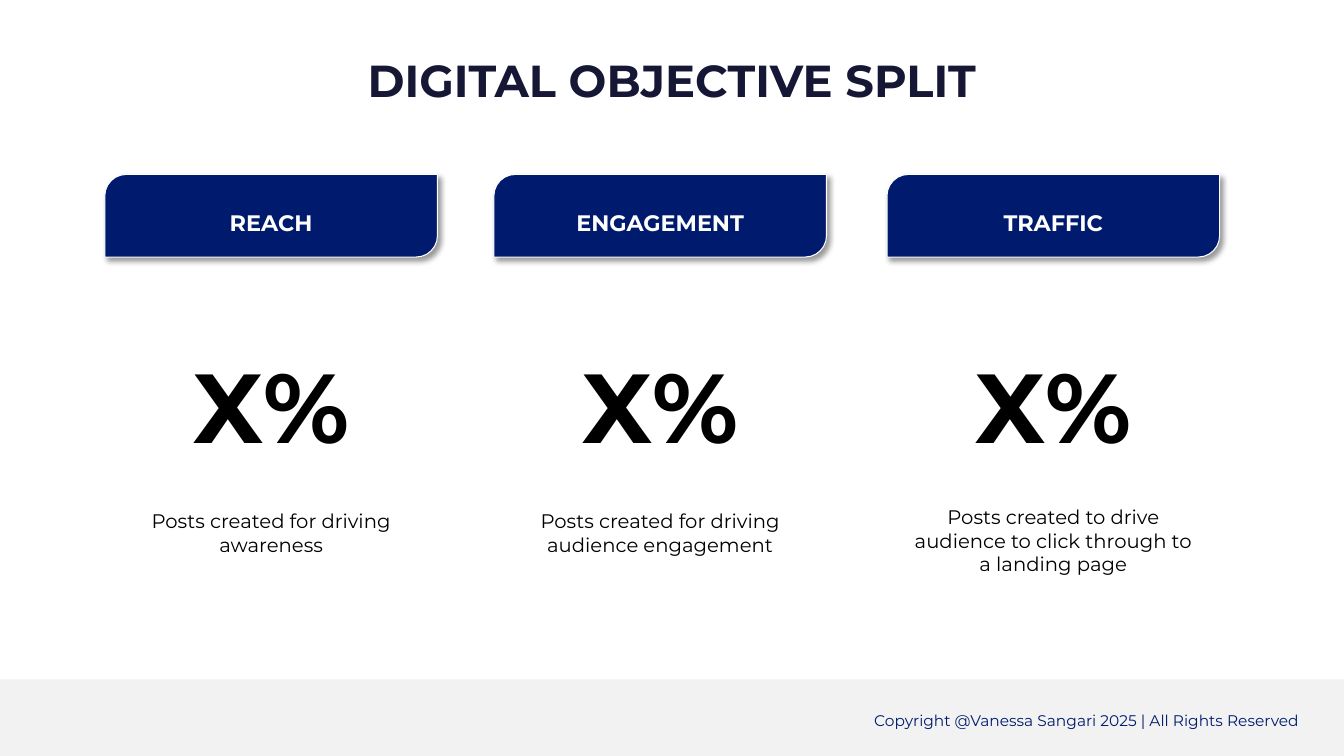
from lxml.etree import SubElement
from pptx import Presentation
from pptx.dml.color import RGBColor
from pptx.enum.shapes import MSO_SHAPE
from pptx.enum.text import MSO_ANCHOR, MSO_AUTO_SIZE, PP_ALIGN
from pptx.oxml.ns import qn
from pptx.util import Pt

COLORS = {
    "navy": "001B6D",
    "title": "161735",
    "text": "000000",
    "band": "F2F2F2",
    "white": "FFFFFF",
}
FONT = "Montserrat"
SLIDE_WIDTH, SLIDE_HEIGHT = 960, 540
COLUMN_TOP, COLUMN_WIDTH = 124.6, 237.6
OBJECTIVES = [
    (74.9, "REACH", "X%", "Posts created for driving awareness", 360),
    (352.8, "ENGAGEMENT", "X%", "Posts created for driving audience engagement", 360),
    (633.6, "TRAFFIC", "X%",
     "Posts created to drive audience to click through to a landing page", 357.1),
]


def color(name):
    return RGBColor.from_string(COLORS[name])


def place(shape, left, top, width, height):
    shape.left, shape.top = Pt(left), Pt(top)
    shape.width, shape.height = Pt(width), Pt(height)


def write(shape, text, size, color_name, bold=False, align=PP_ALIGN.CENTER,
          spacing=1.0, anchor=MSO_ANCHOR.TOP):
    frame = shape.text_frame
    frame.word_wrap = True
    frame.auto_size = MSO_AUTO_SIZE.NONE
    frame.vertical_anchor = anchor
    frame.text = text
    paragraph = frame.paragraphs[0]
    paragraph.alignment = align
    paragraph.line_spacing = spacing
    font = paragraph.font
    font.name, font.size, font.bold = FONT, Pt(size), bold
    font.color.rgb = color(color_name)


def add_text(slide, left, top, width, height, text, size, color_name, **style):
    box = slide.shapes.add_textbox(Pt(left), Pt(top), Pt(width), Pt(height))
    write(box, text, size, color_name, **style)


def add_panel(slide, preset, left, top, width, height, fill):
    panel = slide.shapes.add_shape(preset, Pt(left), Pt(top), Pt(width), Pt(height))
    panel.shadow.inherit = False
    panel.fill.solid()
    panel.fill.fore_color.rgb = color(fill)
    panel.line.fill.background()
    return panel


def add_drop_shadow(shape):
    effects = shape._element.spPr.find(qn("a:effectLst"))
    shadow = SubElement(effects, qn("a:outerShdw"), blurRad=str(Pt(4)),
                        dist=str(Pt(3)), dir=str(45 * 60000), algn="tl", rotWithShape="0")
    shade = SubElement(shadow, qn("a:srgbClr"), val=COLORS["text"])
    SubElement(shade, qn("a:alpha"), val="40000")


def add_footer(slide, left, top, width, height):
    add_panel(slide, MSO_SHAPE.RECTANGLE, left, top, width, height, "band")
    add_text(slide, left + width - 550.3, top + 12.2, 525.6, 25.2,
             "Copyright @Vanessa Sangari 2025 | All Rights Reserved",
             11, "navy", align=PP_ALIGN.RIGHT, spacing=1.5)


def add_title(slide, left, top, width, height):
    title = slide.shapes.title
    place(title, left, top, width, height)
    write(title, "DIGITAL OBJECTIVE SPLIT", 32, "title", bold=True)


def add_objective(slide, left, top, width, name, share, description, description_top):
    header = add_panel(slide, MSO_SHAPE.ROUND_2_DIAG_RECTANGLE, left, top, width, 59, "navy")
    header.adjustments[0], header.adjustments[1] = 0.259, 0
    header.line.color.rgb = color("white")
    header.line.width = Pt(0.75)
    add_drop_shadow(header)
    write(header, name, 16, "white", bold=True, spacing=1.5, anchor=MSO_ANCHOR.MIDDLE)
    frame = header.text_frame
    frame.margin_left = frame.margin_right = Pt(5)
    frame.margin_top = frame.margin_bottom = Pt(2.9)

    add_text(slide, left + 30, top + 119, width - 60, 92, share, 70, "text", bold=True)
    add_text(slide, left + 12, description_top, width - 24, 58, description, 14, "text")


def build_slide(presentation):
    slide = presentation.slides.add_slide(presentation.slide_layouts[5])
    add_footer(slide, 0, 485.3, SLIDE_WIDTH, SLIDE_HEIGHT - 485.3)
    add_title(slide, 105, 33.8, 750, 46)
    for left, *details in OBJECTIVES:
        add_objective(slide, left, COLUMN_TOP, COLUMN_WIDTH, *details)


def main():
    presentation = Presentation()
    presentation.slide_width = Pt(SLIDE_WIDTH)
    presentation.slide_height = Pt(SLIDE_HEIGHT)
    build_slide(presentation)
    presentation.save("out.pptx")


if __name__ == "__main__":
    main()
